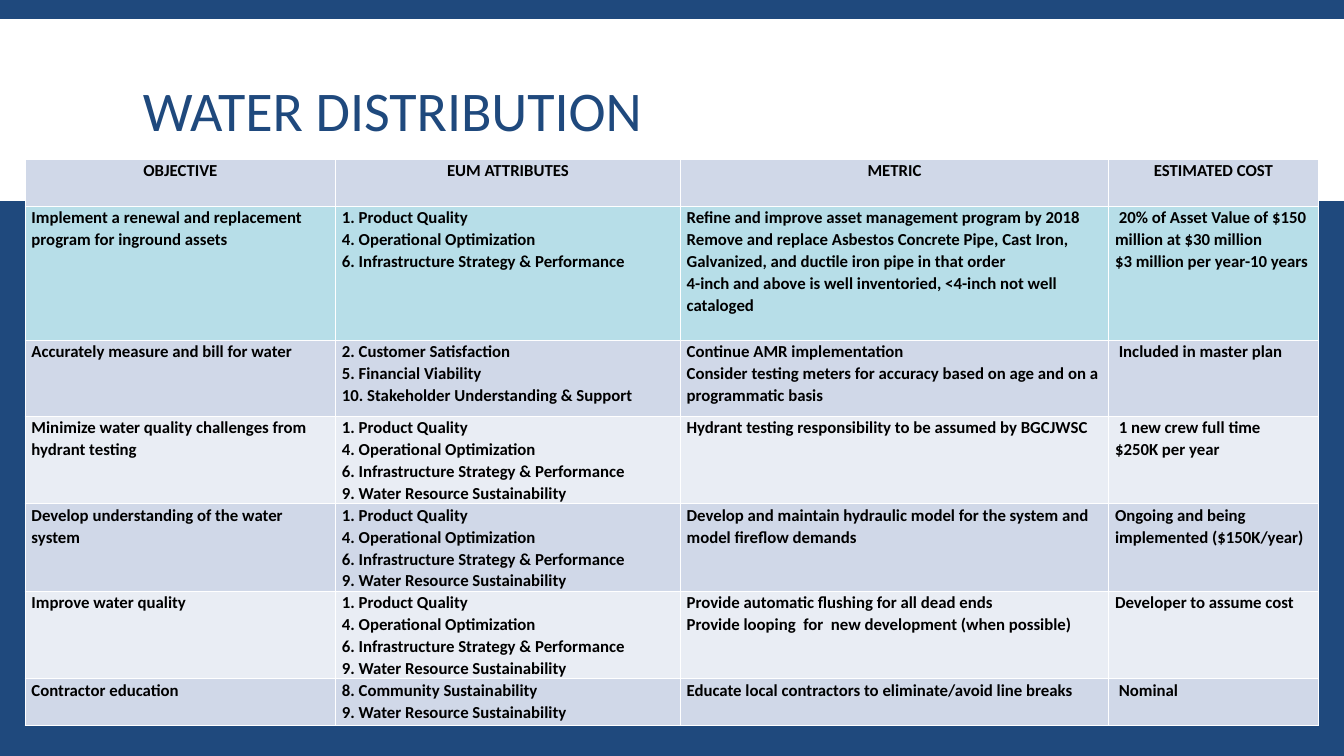
from dataclasses import dataclass

from lxml.etree import SubElement
from pptx import Presentation
from pptx.dml.color import RGBColor
from pptx.enum.shapes import MSO_SHAPE as Preset
from pptx.enum.text import MSO_ANCHOR as Anchor, PP_ALIGN as Align
from pptx.oxml.ns import qn
from pptx.slide import Slide
from pptx.table import _Cell as Cell
from pptx.util import Pt

COLORS = {
    "navy": "1F497D",
    "white": "FFFFFF",
    "black": "000000",
    "band": "D0D8E8",
    "light": "E9EDF4",
    "highlight": "B7DEE8",
}
FONT = "Calibri"
SLIDE_WIDTH, SLIDE_HEIGHT = 960, 540
TABLE_LEFT, TABLE_TOP = 18, 113.75
COLUMN_WIDTHS = (221.75, 246.25, 306, 149.75)
HEADINGS = ("OBJECTIVE", "EUM ATTRIBUTES", "METRIC", "ESTIMATED COST")
ATTRIBUTES = {
    1: "Product Quality",
    2: "Customer Satisfaction",
    4: "Operational Optimization",
    5: "Financial Viability",
    6: "Infrastructure Strategy & Performance",
    8: "Community Sustainability",
    9: "Water Resource Sustainability",
    10: "Stakeholder Understanding & Support",
}


@dataclass(frozen=True)
class Objective:
    name: str
    attributes: tuple[int, ...]
    metrics: tuple[str, ...]
    costs: tuple[str, ...]
    height: float
    fill: str

    def columns(self) -> tuple[tuple[str, ...], ...]:
        numbered = tuple(f"{number}. {ATTRIBUTES[number]}" for number in self.attributes)
        return (self.name,), numbered, self.metrics, self.costs


OBJECTIVES = (
    Objective(
        "Implement a renewal and replacement program for inground assets",
        (1, 4, 6),
        (
            "Refine and improve asset management program by 2018",
            "Remove and replace Asbestos Concrete Pipe, Cast Iron, Galvanized, "
            "and ductile iron pipe in that order",
            "4-inch and above is well inventoried, <4-inch not well cataloged",
        ),
        (" 20% of Asset Value of $150 million at $30 million", "$3 million per year-10 years"),
        95.75,
        "highlight",
    ),
    Objective(
        "Accurately measure and bill for water",
        (2, 5, 10),
        (
            "Continue AMR implementation",
            "Consider testing meters for accuracy based on age and on a programmatic basis",
        ),
        (" Included in master plan",),
        54.5,
        "band",
    ),
    Objective(
        "Minimize water quality challenges from hydrant testing",
        (1, 4, 6, 9),
        ("Hydrant testing responsibility to be assumed by BGCJWSC",),
        (" 1 new crew full time", "$250K per year"),
        62.5,
        "light",
    ),
    Objective(
        "Develop understanding of the water system",
        (1, 4, 6, 9),
        ("Develop and maintain hydraulic model for the system and model fireflow demands",),
        ("Ongoing and being implemented ($150K/year)",),
        62.5,
        "band",
    ),
    Objective(
        "Improve water quality",
        (1, 4, 6, 9),
        (
            "Provide automatic flushing for all dead ends",
            "Provide looping  for  new development (when possible)",
        ),
        ("Developer to assume cost",),
        62.5,
        "light",
    ),
    Objective(
        "Contractor education",
        (8, 9),
        ("Educate local contractors to eliminate/avoid line breaks",),
        (" Nominal",),
        33.5,
        "band",
    ),
)
HEADER_HEIGHT = 33.5


def color(name: str) -> RGBColor:
    return RGBColor.from_string(COLORS[name])


def add_title_band(slide: Slide) -> None:
    band = slide.shapes.add_shape(Preset.RECTANGLE, 0, Pt(13.75), Pt(SLIDE_WIDTH), Pt(129.75))
    band.shadow.inherit = False
    band.fill.solid()
    band.fill.fore_color.rgb = color("white")
    band.line.fill.background()


def add_title(slide: Slide) -> None:
    box = slide.shapes.add_textbox(Pt(95), Pt(22.25), Pt(770.5), Pt(118.75))
    frame = box.text_frame
    frame.word_wrap = True
    frame.vertical_anchor = Anchor.MIDDLE
    paragraph = frame.paragraphs[0]
    paragraph.text = "WATER DISTRIBUTION"
    paragraph.line_spacing = 0.85
    paragraph.font.name = FONT
    paragraph.font.size = Pt(40)
    paragraph.font.color.rgb = color("navy")


def add_borders(cell: Cell) -> None:
    properties = cell._tc.get_or_add_tcPr()
    for side in ("a:lnL", "a:lnR", "a:lnT", "a:lnB"):
        line = SubElement(properties, qn(side), w=str(Pt(1)))
        fill = SubElement(line, qn("a:solidFill"))
        SubElement(fill, qn("a:srgbClr"), val=COLORS["white"])


def fill_cell(cell: Cell, lines: tuple[str, ...], fill: str, align: Align) -> None:
    # Borders must precede the fill in the cell properties.
    add_borders(cell)
    cell.fill.solid()
    cell.fill.fore_color.rgb = color(fill)
    cell.margin_left = cell.margin_right = Pt(4.5)
    cell.margin_top = cell.margin_bottom = 0
    cell.text_frame.text = "\n".join(lines)
    for paragraph in cell.text_frame.paragraphs:
        paragraph.alignment = align
        paragraph.line_spacing = 1.07
        paragraph.font.name = FONT
        paragraph.font.size = Pt(12)
        paragraph.font.bold = True
        paragraph.font.color.rgb = color("black")


def add_objectives_table(slide: Slide) -> None:
    heights = (HEADER_HEIGHT, *(objective.height for objective in OBJECTIVES))
    table = slide.shapes.add_table(
        len(heights), len(COLUMN_WIDTHS),
        Pt(TABLE_LEFT), Pt(TABLE_TOP), Pt(sum(COLUMN_WIDTHS)), Pt(sum(heights)),
    ).table
    for column, width in zip(table.columns, COLUMN_WIDTHS):
        column.width = Pt(width)
    for row, height in zip(table.rows, heights):
        row.height = Pt(height)
    for cell, heading in zip(table.rows[0].cells, HEADINGS):
        fill_cell(cell, (heading,), "band", Align.CENTER)
    for index, objective in enumerate(OBJECTIVES, start=1):
        for cell, lines in zip(table.rows[index].cells, objective.columns()):
            fill_cell(cell, lines, objective.fill, Align.LEFT)


def main() -> None:
    presentation = Presentation()
    presentation.slide_width = Pt(SLIDE_WIDTH)
    presentation.slide_height = Pt(SLIDE_HEIGHT)
    slide = presentation.slides.add_slide(presentation.slide_layouts[6])
    slide.background.fill.solid()
    slide.background.fill.fore_color.rgb = color("navy")
    add_title_band(slide)
    add_title(slide)
    add_objectives_table(slide)
    presentation.save("out.pptx")


if __name__ == "__main__":
    main()
